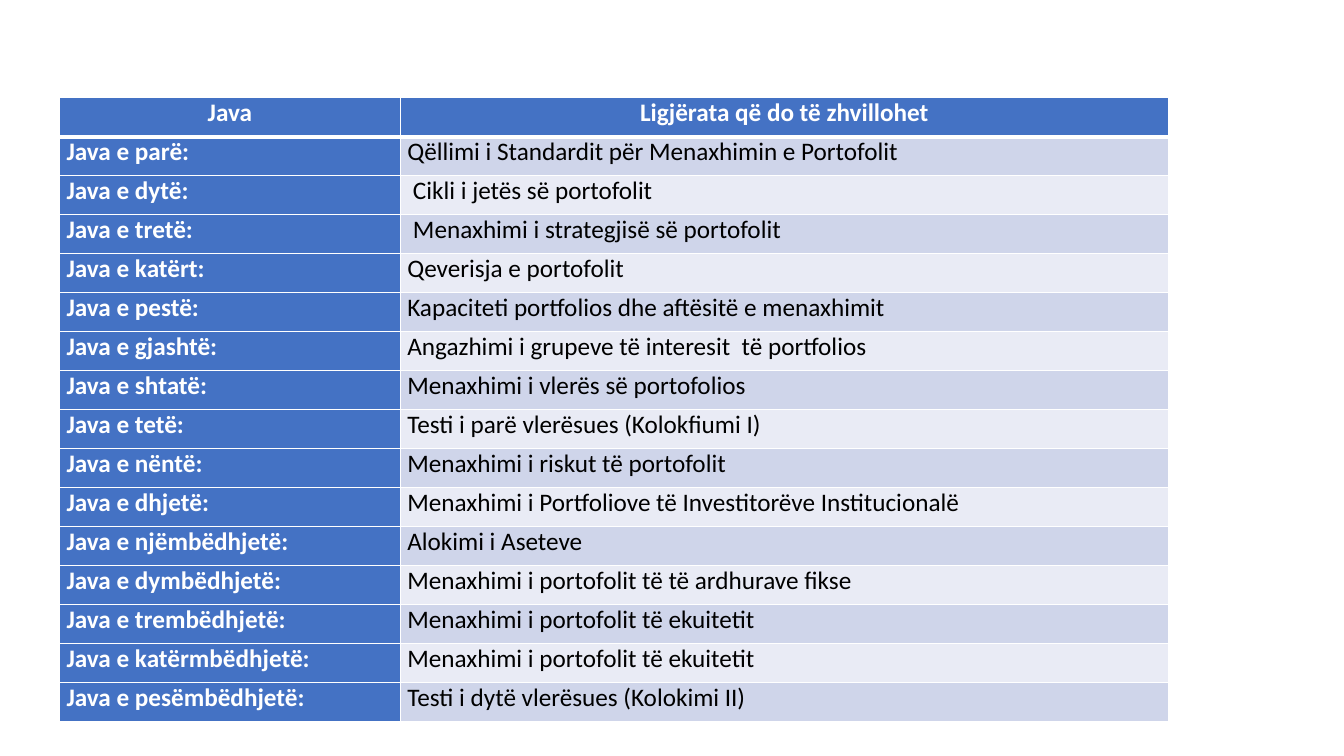
from dataclasses import dataclass

from lxml import etree
from pptx import Presentation
from pptx import util as u
from pptx.dml.color import RGBColor
from pptx.enum import text
from pptx.oxml.ns import qn


@dataclass(frozen=True)
class Theme:
    font: str = "Calibri"
    size: int = 18
    accent: str = "4472C4"
    bands: tuple = ("CFD5EA", "E9EBF5")
    light: str = "FFFFFF"
    dark: str = "000000"
    thin: int = 1
    thick: int = 3


THEME = Theme()

# Table grid, in inches
LEFT, TOP = 0.59, 0.97
COLUMNS = (3.38, 7.62)
HEIGHT = 6.19
SIDE_MARGIN = 0.07

HEADER = ("Java", "Ligjërata që do të zhvillohet")
LECTURES = (
    ("parë", "Qëllimi i Standardit për Menaxhimin e Portofolit"),
    ("dytë", " Cikli i jetës së portofolit"),
    ("tretë", " Menaxhimi i strategjisë së portofolit"),
    ("katërt", "Qeverisja e portofolit"),
    ("pestë", "Kapaciteti portfolios dhe aftësitë e menaxhimit"),
    ("gjashtë", "Angazhimi i grupeve të interesit  të portfolios"),
    ("shtatë", "Menaxhimi i vlerës së portofolios"),
    ("tetë", "Testi i parë vlerësues (Kolokfiumi I)"),
    ("nëntë", "Menaxhimi i riskut të portofolit"),
    ("dhjetë", "Menaxhimi i Portfoliove të Investitorëve Institucionalë"),
    ("njëmbëdhjetë", "Alokimi i Aseteve"),
    ("dymbëdhjetë", "Menaxhimi i portofolit të të ardhurave fikse"),
    ("trembëdhjetë", "Menaxhimi i portofolit të ekuitetit"),
    ("katërmbëdhjetë", "Menaxhimi i portofolit të ekuitetit"),
    ("pesëmbëdhjetë", "Testi i dytë vlerësues (Kolokimi II)"),
)


def set_borders(cell, top, bottom):
    """Draw the four cell borders; widths in points."""
    properties = cell._tc.get_or_add_tcPr()
    widths = {"lnL": THEME.thin, "lnR": THEME.thin, "lnT": top, "lnB": bottom}
    for side, width in widths.items():
        line = etree.SubElement(properties, qn(f"a:{side}"), w=str(u.Pt(width)))
        fill = etree.SubElement(line, qn("a:solidFill"))
        etree.SubElement(fill, qn("a:srgbClr"), val=THEME.light)


def fill_cell(cell, words, fill, color, bold, align):
    cell.margin_left = cell.margin_right = u.Inches(SIDE_MARGIN)
    cell.margin_top = cell.margin_bottom = 0
    cell.fill.solid()
    cell.fill.fore_color.rgb = RGBColor.from_string(fill)
    paragraph = cell.text_frame.paragraphs[0]
    paragraph.text = words
    paragraph.alignment = align
    font = paragraph.runs[0].font
    font.name, font.size, font.bold = THEME.font, u.Pt(THEME.size), bold
    font.color.rgb = RGBColor.from_string(color)


def add_schedule(slide, rows):
    shape = slide.shapes.add_table(
        len(rows), len(COLUMNS), u.Inches(LEFT), u.Inches(TOP),
        u.Inches(sum(COLUMNS)), u.Inches(HEIGHT))
    table = shape.table
    for column, width in zip(table.columns, COLUMNS):
        column.width = u.Inches(width)

    for r, row in enumerate(rows):
        table.rows[r].height = u.Inches(HEIGHT / len(rows))
        align = text.PP_ALIGN.LEFT if r else text.PP_ALIGN.CENTER
        for c, words in enumerate(row):
            cell = table.cell(r, c)
            # The heavy rule lies between the header and the first week
            set_borders(cell, THEME.thick if r == 1 else THEME.thin,
                        THEME.thick if r == 0 else THEME.thin)
            heading = r == 0 or c == 0
            fill = THEME.accent if heading else THEME.bands[(r - 1) % 2]
            color = THEME.light if heading else THEME.dark
            fill_cell(cell, words, fill, color, heading, align)


def main():
    presentation = Presentation()
    presentation.slide_width = u.Inches(13.33)
    presentation.slide_height = u.Inches(7.5)
    slide = presentation.slides.add_slide(presentation.slide_layouts[6])

    # Weekly lecture plan
    weeks = [(f"Java e {ordinal}:", lecture) for ordinal, lecture in LECTURES]
    add_schedule(slide, [HEADER, *weeks])

    presentation.save("out.pptx")


if __name__ == "__main__":
    main()
